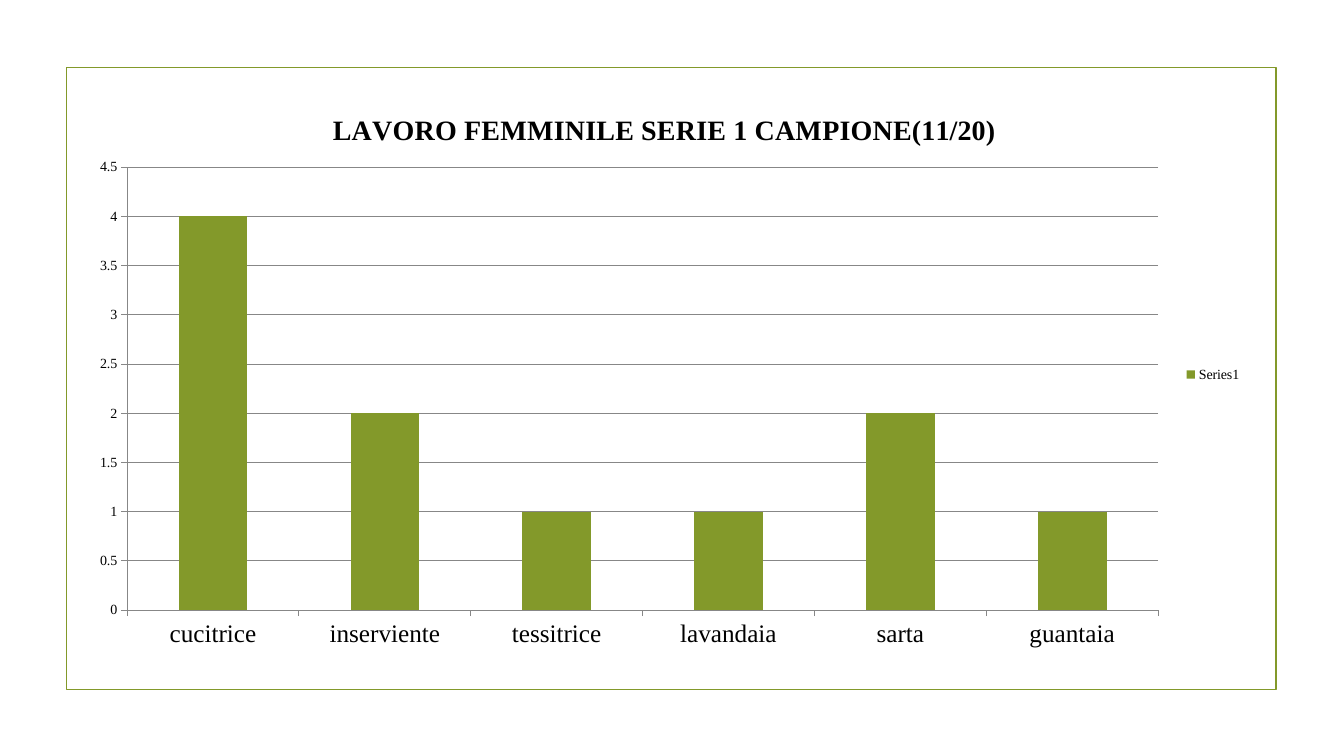
from lxml import etree
from pptx import Presentation
from pptx.chart.data import CategoryChartData
from pptx.dml.color import RGBColor
from pptx.enum.chart import XL_CHART_TYPE, XL_LEGEND_POSITION, XL_TICK_MARK
from pptx.enum.shapes import MSO_SHAPE
from pptx.oxml.ns import qn
from pptx.util import Inches, Pt

OLIVE = RGBColor(0x83, 0x99, 0x2A)
BLACK = RGBColor(0, 0, 0)
GREY = RGBColor(0x87, 0x87, 0x87)
FONT = "Times New Roman"
JOBS = {"cucitrice": 4, "inserviente": 2, "tessitrice": 1,
        "lavandaia": 1, "sarta": 2, "guantaia": 1}


def style_font(font, size, bold=False):
    font.name = FONT
    font.size = Pt(size)
    font.bold = bold
    font.color.rgb = BLACK


def style_axis(axis, size):
    axis.major_tick_mark = XL_TICK_MARK.OUTSIDE
    axis.minor_tick_mark = XL_TICK_MARK.NONE
    axis.format.line.color.rgb = GREY
    axis.format.line.width = Pt(0.75)
    style_font(axis.tick_labels.font, size)


def place_plot(chart, **fractions):
    plot_area = chart.plots[0]._element.getparent()
    for layout in plot_area.findall(qn("c:layout")):
        plot_area.remove(layout)
    layout = etree.Element(qn("c:layout"))
    manual = etree.SubElement(layout, qn("c:manualLayout"))
    settings = {"layoutTarget": "inner", "xMode": "edge", "yMode": "edge", **fractions}
    for name, value in settings.items():
        etree.SubElement(manual, qn(f"c:{name}")).set("val", str(value))
    plot_area.insert(0, layout)


def add_frame(slide, left, top, width, height):
    frame = slide.shapes.add_shape(MSO_SHAPE.RECTANGLE, left, top, width, height)
    frame.shadow.inherit = False
    frame.fill.background()
    frame.line.color.rgb = OLIVE
    frame.line.width = Pt(1.25)


def add_jobs_chart(slide, left, top, width, height):
    data = CategoryChartData()
    data.categories = list(JOBS)
    data.add_series("Series1", list(JOBS.values()))
    chart = slide.shapes.add_chart(
        XL_CHART_TYPE.COLUMN_STACKED, left, top, width, height, data).chart
    style_font(chart.font, 10)

    title = chart.chart_title.text_frame
    title.text = "LAVORO FEMMINILE SERIE 1 CAMPIONE(11/20)"
    style_font(title.paragraphs[0].runs[0].font, 20, True)
    chart.chart_title.include_in_layout = False

    chart.has_legend = True
    chart.legend.position = XL_LEGEND_POSITION.RIGHT
    chart.legend.include_in_layout = False
    style_font(chart.legend.font, 10)

    style_axis(chart.category_axis, 18)
    value_axis = chart.value_axis
    style_axis(value_axis, 10)
    value_axis.minimum_scale = 0
    value_axis.maximum_scale = 4.5
    value_axis.major_unit = 0.5
    value_axis.has_major_gridlines = True
    value_axis.major_gridlines.format.line.color.rgb = GREY
    value_axis.major_gridlines.format.line.width = Pt(0.75)

    plot = chart.plots[0]
    plot.gap_width = 150
    plot.overlap = 100
    plot.vary_by_categories = False
    fill = plot.series[0].format.fill
    fill.solid()
    fill.fore_color.rgb = OLIVE
    place_plot(chart, x=0.043, y=0.136, w=0.877, h=0.778)


def main():
    presentation = Presentation()
    presentation.slide_width = Inches(13.33)
    presentation.slide_height = Inches(7.5)
    slide = presentation.slides.add_slide(presentation.slide_layouts[6])
    add_frame(slide, Inches(0.66), Inches(0.67), Inches(12), Inches(6.17))
    add_jobs_chart(slide, Inches(0.76), Inches(0.89), Inches(11.66), Inches(5.65))
    presentation.save("out.pptx")


if __name__ == "__main__":
    main()
